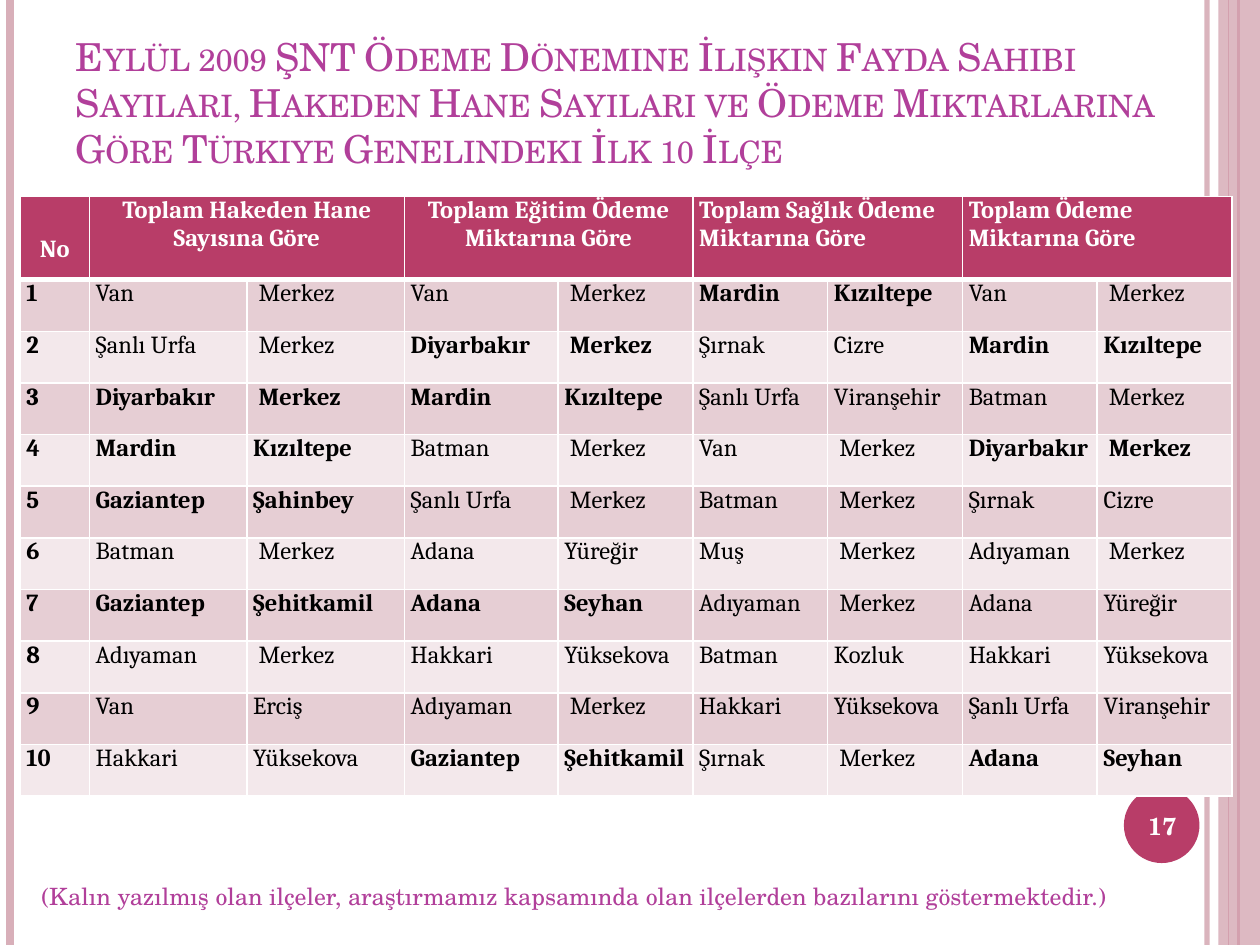
import pptx
import pptx.util
import pptx.dml.color
import pptx.enum.shapes
import pptx.enum.text
import pptx.oxml
import pptx.oxml.ns
import lxml.etree

COLORS = {"accent": "B83D68", "stripe": "D8AFB9", "heading": "B13F9A", "white": "FFFFFF",
          "black": "000000", "odd": "E6CED4", "even": "F3E8EB"}
SERIF, TABLE_FONT = "TeX Gyre Schola", "Cambria"
Inches, Pt = pptx.util.Inches, pptx.util.Pt
PP_ALIGN, ANCHOR = pptx.enum.text.PP_ALIGN, pptx.enum.text.MSO_ANCHOR
qn = pptx.oxml.ns.qn


def paint(color_format, name, alpha=100):
    color_format.rgb = pptx.dml.color.RGBColor.from_string(COLORS[name])
    if alpha < 100:
        for rgb in color_format._xFill.iter(qn("a:srgbClr")):
            lxml.etree.SubElement(rgb, qn("a:alpha"), val=str(alpha * 1000))


def write(frame, text, size, font, color, bold=False, align=PP_ALIGN.LEFT, anchor=ANCHOR.TOP):
    frame.text = text
    frame.word_wrap = True
    frame.vertical_anchor = anchor
    para = frame.paragraphs[0]
    para.alignment = align
    span = para.runs[0]
    span.font.size, span.font.name, span.font.bold = Pt(size), font, bold
    paint(span.font.color, color)
    return para


deck = pptx.Presentation()
deck.slide_width, deck.slide_height = Inches(10), Inches(7.5)
page = deck.slides.add_slide(deck.slide_layouts[5])
shapes = page.shapes

# Vertical stripes at the page edges: x, colour, width, opacity
SHAPE = pptx.enum.shapes.MSO_SHAPE
stripes = [(9.58, "stripe", 3, 93), (0.08, "stripe", 4.5, 100),
           (9.83, "accent", 1.5, 100), (9.75, "accent", 0.75, 100)]
for x, color, width, alpha in stripes:
    stripe = shapes.add_connector(pptx.enum.shapes.MSO_CONNECTOR.STRAIGHT,
                                  Inches(x), 0, Inches(x), deck.slide_height)
    stripe.line.width = Pt(width)
    stripe.line.fill.solid()
    stripe.line.color.rgb = pptx.dml.color.RGBColor.from_string(COLORS[color])
    properties = stripe._element.spPr
    if alpha < 100:
        lxml.etree.SubElement(next(properties.iter(qn("a:srgbClr"))), qn("a:alpha"),
                              val=str(alpha * 1000))
    lxml.etree.SubElement(properties, qn("a:effectLst"))

# Right-hand band and page number disc
for kind, box, color, alpha in [(SHAPE.RECTANGLE, (9.67, 0, 0.33, 7.5), "stripe", 87),
                                (SHAPE.OVAL, (8.92, 6.25, 0.6, 0.6), "accent", 100)]:
    ornament = shapes.add_shape(kind, *map(Inches, box))
    ornament.shadow.inherit = False
    ornament.fill.solid()
    paint(ornament.fill.fore_color, color)
    ornament.line.fill.background()
    if alpha < 100:
        lxml.etree.SubElement(next(ornament._element.spPr.iter(qn("a:srgbClr"))),
                              qn("a:alpha"), val=str(alpha * 1000))

# Title
title = shapes.title
title.left, title.top, title.width, title.height = map(Inches, (0.5, 0, 8.8, 1.41))
heading = write(title.text_frame,
                "Eylül 2009 ŞNT Ödeme Dönemine İlişkin Fayda Sahibi Sayilari, Hakeden Hane "
                "Sayilari ve Ödeme Miktarlarina Göre Türkiye Genelindeki İlk 10 İlçe",
                22, SERIF, "heading", anchor=ANCHOR.BOTTOM)
title.text_frame.auto_size = pptx.enum.text.MSO_AUTO_SIZE.NONE
heading.runs[0].font._element.set("cap", "small")

# Ranking table: province/district pairs, * marks districts in the study
headers = ["Toplam Hakeden Hane Sayısına Göre", "Toplam Eğitim Ödeme Miktarına Göre",
           "Toplam Sağlık Ödeme Miktarına Göre", "Toplam Ödeme Miktarına Göre"]
ranking = [
    ["Van/ Merkez", "Van/ Merkez", "*Mardin/Kızıltepe", "Van/ Merkez"],
    ["Şanlı Urfa/ Merkez", "*Diyarbakır/ Merkez", "Şırnak/Cizre", "*Mardin/Kızıltepe"],
    ["*Diyarbakır/ Merkez", "*Mardin/Kızıltepe", "Şanlı Urfa/Viranşehir", "Batman/ Merkez"],
    ["*Mardin/Kızıltepe", "Batman/ Merkez", "Van/ Merkez", "*Diyarbakır/ Merkez"],
    ["*Gaziantep/Şahinbey", "Şanlı Urfa/ Merkez", "Batman/ Merkez", "Şırnak/Cizre"],
    ["Batman/ Merkez", "Adana/Yüreğir", "Muş/ Merkez", "Adıyaman/ Merkez"],
    ["*Gaziantep/Şehitkamil", "*Adana/Seyhan", "Adıyaman/ Merkez", "Adana/Yüreğir"],
    ["Adıyaman/ Merkez", "Hakkari/Yüksekova", "Batman/Kozluk", "Hakkari/Yüksekova"],
    ["Van/Erciş", "Adıyaman/ Merkez", "Hakkari/Yüksekova", "Şanlı Urfa/Viranşehir"],
    ["Hakkari/Yüksekova", "*Gaziantep/Şehitkamil", "Şırnak/ Merkez", "*Adana/Seyhan"],
]
widths = [0.55, 1.25, 1.25, 1.22] + [1.07] * 5
heights = [0.66] + [0.41] * len(ranking)
table = shapes.add_table(len(heights), len(widths), Inches(0.16), Inches(1.56),
                         Inches(sum(widths)), Inches(sum(heights))).table
for column, width in zip(table.columns, widths):
    column.width = Inches(width)
for row, height in zip(table.rows, heights):
    row.height = Inches(height)

# Cell borders, margins and fills
for r, row in enumerate(table.rows):
    for cell in row.cells:
        cell.margin_left = cell.margin_right = Inches(0.05)
        cell.margin_top = cell.margin_bottom = 0
        thick_side = {0: "lnB", 1: "lnT"}.get(r)
        for side in ("lnL", "lnR", "lnT", "lnB"):
            border = lxml.etree.SubElement(cell._tc.get_or_add_tcPr(), qn("a:" + side),
                                           w=str(Pt(3 if side == thick_side else 1)))
            solid = lxml.etree.SubElement(border, qn("a:solidFill"))
            lxml.etree.SubElement(solid, qn("a:srgbClr"), val=COLORS["white"])
        cell.fill.solid()
        paint(cell.fill.fore_color, "accent" if r == 0 else "odd" if r % 2 else "even")

# Header row
corner = table.cell(0, 0)
write(corner.text_frame, "No", 14, TABLE_FONT, "white", True, PP_ALIGN.CENTER)
corner.vertical_anchor = ANCHOR.BOTTOM
corner.margin_bottom = Inches(0.13)
for i, text in enumerate(headers):
    cell = table.cell(0, 1 + 2 * i)
    cell.merge(table.cell(0, 2 + 2 * i))
    write(cell.text_frame, text, 14, TABLE_FONT, "white", True,
          PP_ALIGN.CENTER if i < 2 else PP_ALIGN.LEFT).space_before = Pt(6)

# Ranked rows
for r, pairs in enumerate(ranking, 1):
    entries = [(str(r), True)]
    for pair in pairs:
        entries += [(name, pair.startswith("*")) for name in pair.lstrip("*").split("/")]
    for c, (text, bold) in enumerate(entries):
        para = write(table.cell(r, c).text_frame, text, 14, TABLE_FONT, "black", bold)
        para.space_before = Pt(6)

# Page number and footnote
number = shapes.add_textbox(*map(Inches, (8.89, 6.27, 0.67, 0.57)))
write(number.text_frame, "17", 14, SERIF, "white", True, PP_ALIGN.CENTER, ANCHOR.MIDDLE)
note = shapes.add_textbox(*map(Inches, (0.23, 6.8, 9.53, 0.48)))
write(note.text_frame,
      "(Kalın yazılmış olan ilçeler, araştırmamız kapsamında olan ilçelerden "
      "bazılarını göstermektedir.)",
      13.6, SERIF, "heading", anchor=ANCHOR.BOTTOM).line_spacing = 0.9

deck.save("out.pptx")
